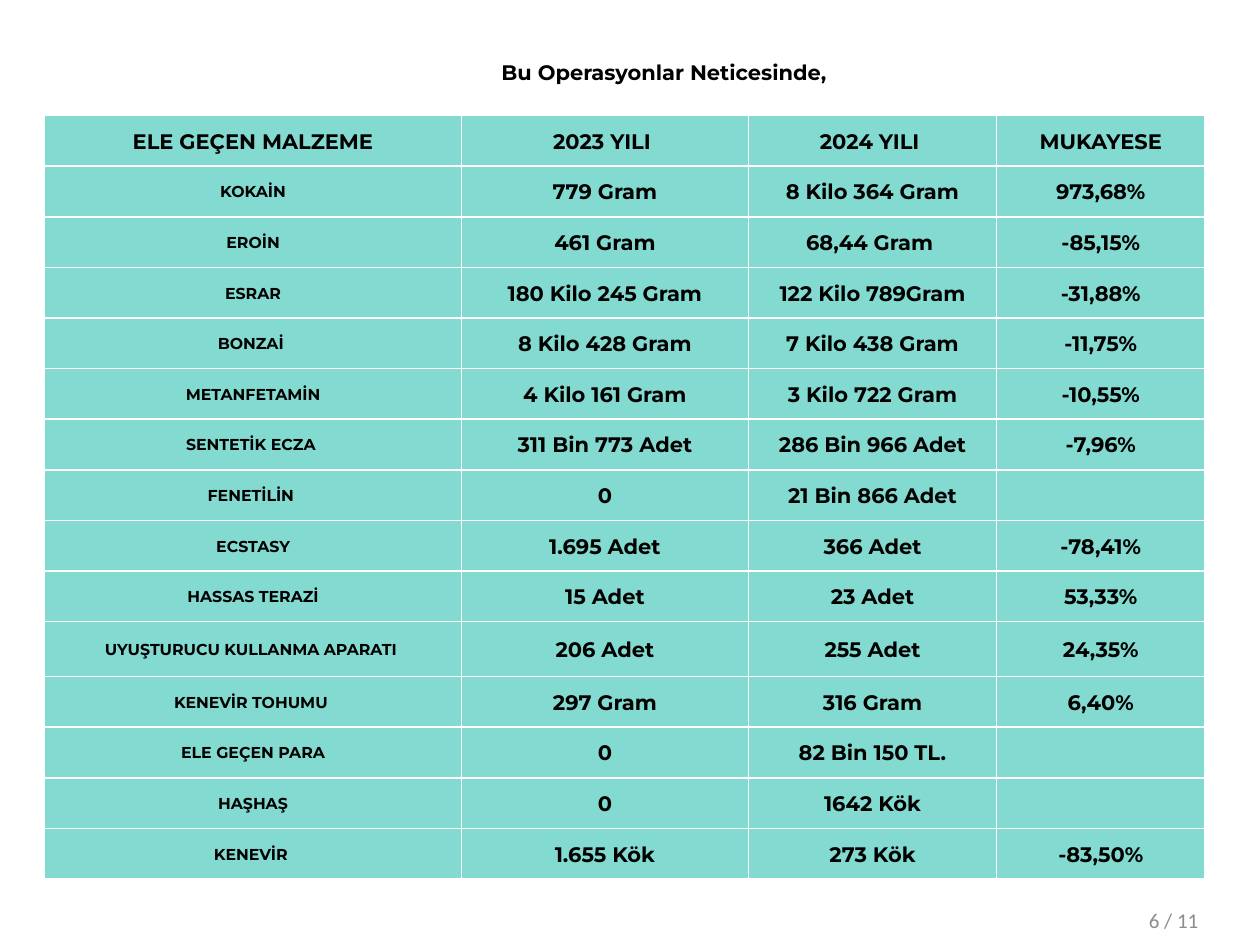
import pptx
import pptx.dml.color
import pptx.enum.text
import pptx.oxml.ns
import pptx.util
from lxml import etree

Cm = pptx.util.Cm
Pt = pptx.util.Pt
RGBColor = pptx.dml.color.RGBColor
ALIGN = pptx.enum.text.PP_ALIGN
ANCHOR = pptx.enum.text.MSO_ANCHOR
qn = pptx.oxml.ns.qn

TURQUOISE = RGBColor(0x82, 0xDA, 0xD0)
WHITE = RGBColor(0xFF, 0xFF, 0xFF)
BLACK = RGBColor(0, 0, 0)
GREY = RGBColor(0x8C, 0x8C, 0x8C)

COL_WIDTHS = [8.4, 5.79, 5.0, 4.2]
ROW_HEIGHT = 1.02
TALL_ROW = 10
TALL_HEIGHT = 1.11

ROWS = [
    ["ELE GEÇEN MALZEME", "2023 YILI ", "2024 YILI ", "MUKAYESE"],
    ["KOKAİN", "779 Gram", "8 Kilo 364 Gram", "973,68%"],
    ["EROİN", "461 Gram", "68,44 Gram ", "-85,15%"],
    ["ESRAR", "180 Kilo 245 Gram", "122 Kilo 789Gram", "-31,88%"],
    ["BONZAİ ", "8 Kilo 428 Gram", "7 Kilo 438 Gram", "-11,75%"],
    ["METANFETAMİN", "4 Kilo 161 Gram", "3 Kilo 722 Gram", "-10,55%"],
    ["SENTETİK ECZA ", "311 Bin 773 Adet", "286 Bin 966 Adet", "-7,96%"],
    ["FENETİLİN ", "0", "21 Bin 866 Adet", ""],
    ["ECSTASY", "1.695 Adet", "366 Adet", "-78,41%"],
    ["HASSAS TERAZİ", "15 Adet", "23 Adet", "53,33%"],
    ["UYUŞTURUCU KULLANMA APARATI ", "206 Adet", "255 Adet", "24,35%"],
    ["KENEVİR TOHUMU ", "297 Gram", "316 Gram", "6,40%"],
    ["ELE GEÇEN PARA", "0", "82 Bin 150 TL.", ""],
    ["HAŞHAŞ", "0", "1642 Kök", ""],
    ["KENEVİR ", "1.655 Kök", "273 Kök", "-83,50%"],
]


def add_run(p, text, size, font, color, bold=False):
    r = p.add_run()
    r.text = text
    r.font.size = Pt(size)
    r.font.name = font
    r.font.bold = bold
    r.font.color.rgb = color


def add_text_box(s, left, top, width, height, anchor):
    sp = s.shapes.add_textbox(Cm(left), Cm(top), Cm(width), Cm(height))
    tf = sp.text_frame
    tf.word_wrap = True
    tf.vertical_anchor = anchor
    return tf.paragraphs[0]


def set_borders(cell, color, width):
    tc_pr = cell._tc.get_or_add_tcPr()
    for i, side in enumerate(("a:lnL", "a:lnR", "a:lnT", "a:lnB")):
        ln = etree.Element(qn(side), w=str(Pt(width)))
        fill = etree.SubElement(ln, qn("a:solidFill"))
        etree.SubElement(fill, qn("a:srgbClr"), val=str(color))
        tc_pr.insert(i, ln)


def fill_cell(cell, text, size):
    cell.fill.solid()
    cell.fill.fore_color.rgb = TURQUOISE
    cell.vertical_anchor = ANCHOR.MIDDLE
    cell.margin_left = cell.margin_right = cell.margin_top = Cm(0.03)
    cell.margin_bottom = 0
    set_borders(cell, WHITE, 1)
    p = cell.text_frame.paragraphs[0]
    p.alignment = ALIGN.CENTER
    if text:
        add_run(p, text, size, "Montserrat", BLACK, True)


def add_seizure_table(s):
    heights = [ROW_HEIGHT] * len(ROWS)
    heights[TALL_ROW] = TALL_HEIGHT
    frame = s.shapes.add_table(len(ROWS), len(COL_WIDTHS), Cm(0.9), Cm(2.33),
                               Cm(sum(COL_WIDTHS)), Cm(sum(heights)))
    table = frame.table
    for col, width in zip(table.columns, COL_WIDTHS):
        col.width = Cm(width)
    for row, height in zip(table.rows, heights):
        row.height = Cm(height)
    for i, texts in enumerate(ROWS):
        for j, text in enumerate(texts):
            size = 9 if i > 0 and j == 0 else 12
            fill_cell(table.cell(i, j), text, size)


def add_title(s):
    p = add_text_box(s, 1.5, 0.8, 20.6, 1.04, ANCHOR.BOTTOM)
    p.line_spacing = 1.07
    p._p.get_or_add_pPr().set("marL", str(Cm(8.36)))
    add_run(p, "Bu Operasyonlar Neticesinde,", 12, "Montserrat", BLACK, True)


def add_page_number(s):
    p = add_text_box(s, 22.91, 18.17, 4.39, 0.76, ANCHOR.TOP)
    add_run(p, "6 / 11", 12, "Calibri", GREY)


def main():
    prs = pptx.Presentation()
    prs.slide_width = Cm(25.4)
    prs.slide_height = Cm(19.05)
    s = prs.slides.add_slide(prs.slide_layouts[6])
    add_page_number(s)
    add_seizure_table(s)
    add_title(s)
    prs.save("out.pptx")


if __name__ == "__main__":
    main()
